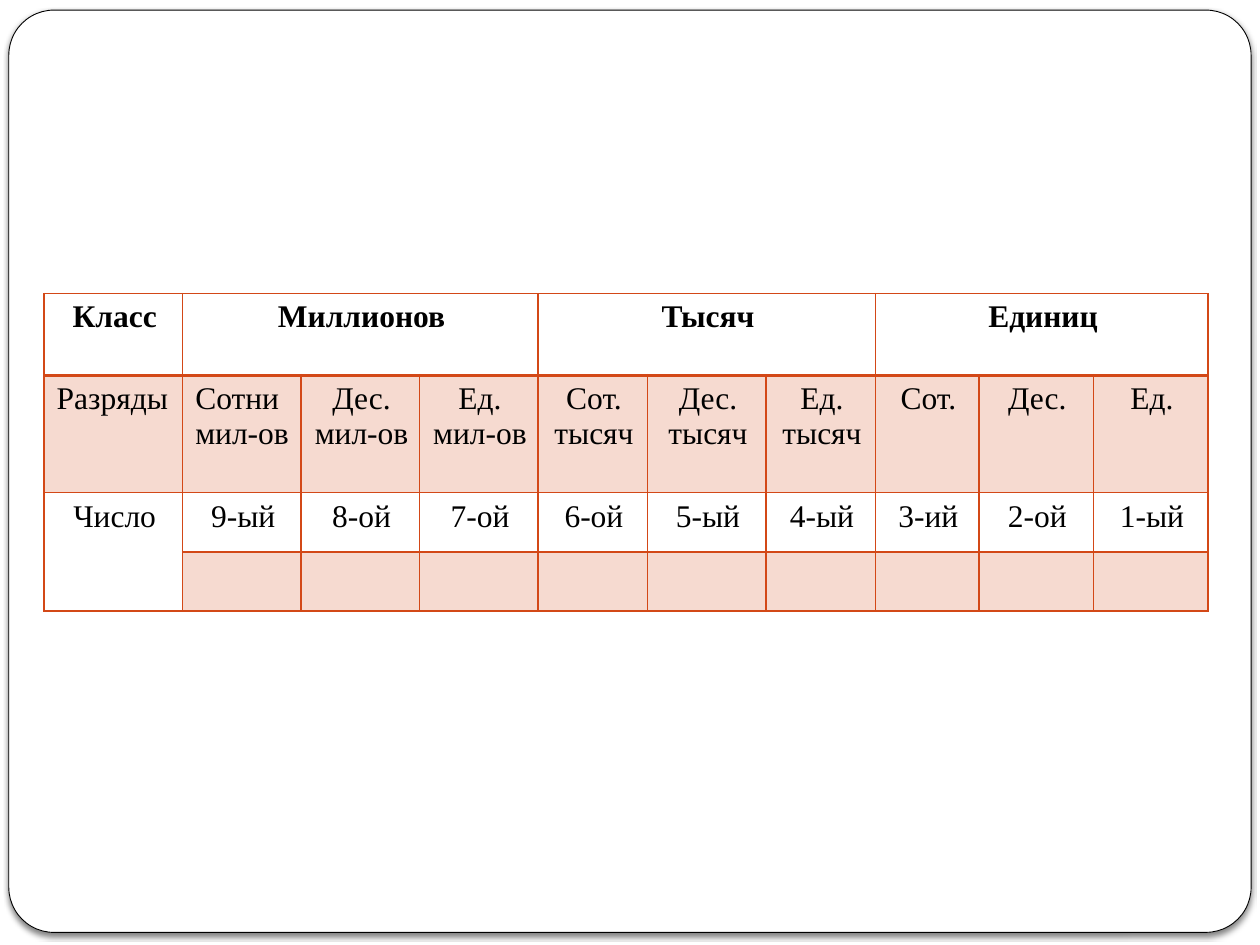
from lxml.etree import SubElement
from pptx import Presentation
from pptx.dml.color import RGBColor
from pptx.enum.shapes import MSO_SHAPE
from pptx.enum.text import PP_ALIGN
from pptx.oxml.ns import qn
from pptx.util import Inches, Pt

BLACK = RGBColor(0x00, 0x00, 0x00)
WHITE = RGBColor(0xFF, 0xFF, 0xFF)
ORANGE = RGBColor(0xD3, 0x48, 0x17)

# Content: one list per table row
CLASSES = ["Миллионов", "Тысяч", "Единиц"]
ROWS = [
    ["Класс"] + [text for name in CLASSES for text in (name, "", "")],
    ["Разряды", "Сотни\nмил-ов", "Дес.\nмил-ов", "Ед.\nмил-ов",
     "Сот.\nтысяч", "Дес.\nтысяч", "Ед.\nтысяч", "Сот.", "Дес.", "Ед."],
    ["Число", "9-ый", "8-ой", "7-ой", "6-ой", "5-ый", "4-ый", "3-ий", "2-ой", "1-ый"],
    [""] * 10,
]
COLUMN_WIDTHS = [1.1, 0.94, 0.94, 0.94, 0.87, 0.94, 0.87, 0.82, 0.91, 0.91]
ROW_HEIGHTS = [0.65, 0.93, 0.47, 0.47]
LEFT_ALIGNED = {(1, 0), (1, 1)}
TEXT_FORMAT = {"name": "Times New Roman", "size": Pt(18)}
THIN, THICK = Pt(0.96), Pt(1.98)


def add_color(parent, color, alpha=100):
    fill = SubElement(parent, qn("a:solidFill"))
    value = SubElement(fill, qn("a:srgbClr"), val=str(color))
    if alpha < 100:
        SubElement(value, qn("a:alpha"), val=str(alpha * 1000))


def add_frame(page):
    frame = page.shapes.add_shape(MSO_SHAPE.ROUNDED_RECTANGLE, Inches(0.07),
                                  Inches(0.08), Inches(9.86), Inches(7.32))
    frame.adjustments[0] = 0.049
    frame.fill.solid()
    frame.fill.fore_color.rgb = WHITE
    frame.line.color.rgb = BLACK
    frame.line.width = Pt(0.5)
    frame.shadow.inherit = False
    effects = frame._element.spPr.find(qn("a:effectLst"))
    shadow = SubElement(effects, qn("a:outerShdw"), blurRad=str(Pt(3)),
                        dist=str(Pt(2)), dir=str(90 * 60000), rotWithShape="0")
    color = SubElement(shadow, qn("a:srgbClr"), val=str(BLACK))
    SubElement(color, qn("a:alpha"), val="50000")


def write_text(cell, text, alignment, bold):
    cell.margin_right = Inches(0.08)  # keeps the widest words on one line
    cell.text = text
    for para in cell.text_frame.paragraphs:
        para.alignment = alignment
        for span in para.runs:
            for key, value in TEXT_FORMAT.items():
                setattr(span.font, key, value)
            span.font.bold = bold
            span.font.color.rgb = BLACK


def style_cell(cell, row):
    properties = cell._tc.get_or_add_tcPr()
    widths = {"L": THIN, "R": THIN, "T": THICK if row == 1 else THIN,
              "B": THICK if row == 0 else THIN}
    for side, width in widths.items():
        add_color(SubElement(properties, qn(f"a:ln{side}"), w=str(width)), ORANGE)
    if row % 2:
        add_color(properties, ORANGE, alpha=20)
    else:
        cell.fill.background()


def add_place_table(page):
    table = page.shapes.add_table(
        len(ROWS), len(COLUMN_WIDTHS), Inches(0.35), Inches(2.33),
        Inches(sum(COLUMN_WIDTHS)), Inches(sum(ROW_HEIGHTS))).table
    for column, width in zip(table.columns, COLUMN_WIDTHS):
        column.width = Inches(width)
    for row, height in zip(table.rows, ROW_HEIGHTS):
        row.height = Inches(height)

    for row, texts in enumerate(ROWS):
        for column, text in enumerate(texts):
            cell = table.cell(row, column)
            centred = (row, column) not in LEFT_ALIGNED
            write_text(cell, text, PP_ALIGN.CENTER if centred else PP_ALIGN.LEFT,
                       bold=row == 0)
            # The merged cell under "Число" stays white
            style_cell(cell, 2 if (row, column) == (3, 0) else row)

    # Each class spans three digits; "Число" spans two rows
    for first in range(1, len(COLUMN_WIDTHS), 3):
        table.cell(0, first).merge(table.cell(0, first + 2))
    table.cell(2, 0).merge(table.cell(3, 0))


def main():
    deck = Presentation()
    deck.slide_width, deck.slide_height = Inches(10), Inches(7.5)
    page = deck.slides.add_slide(deck.slide_layouts[6])
    add_frame(page)
    add_place_table(page)
    deck.save("out.pptx")


if __name__ == "__main__":
    main()
